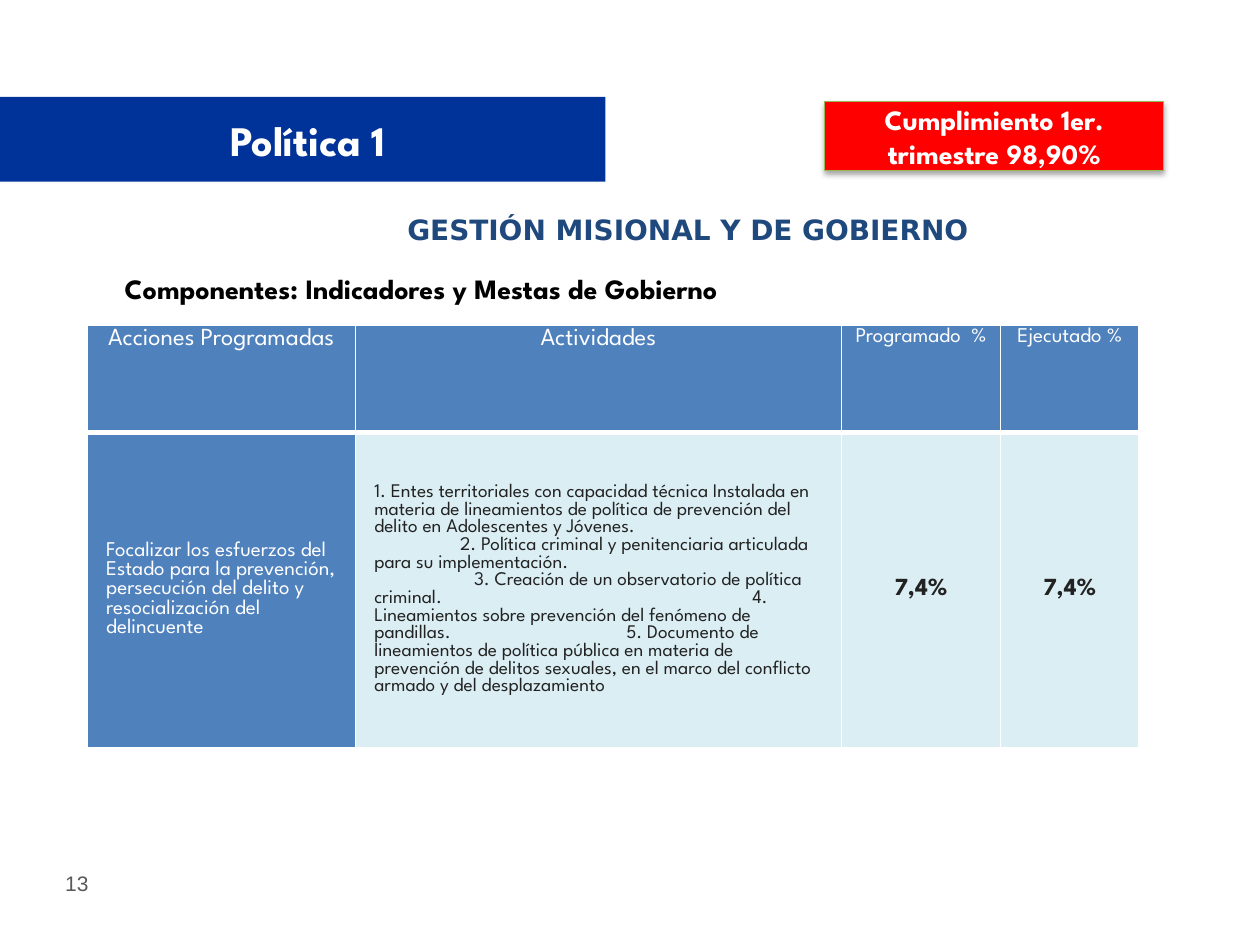
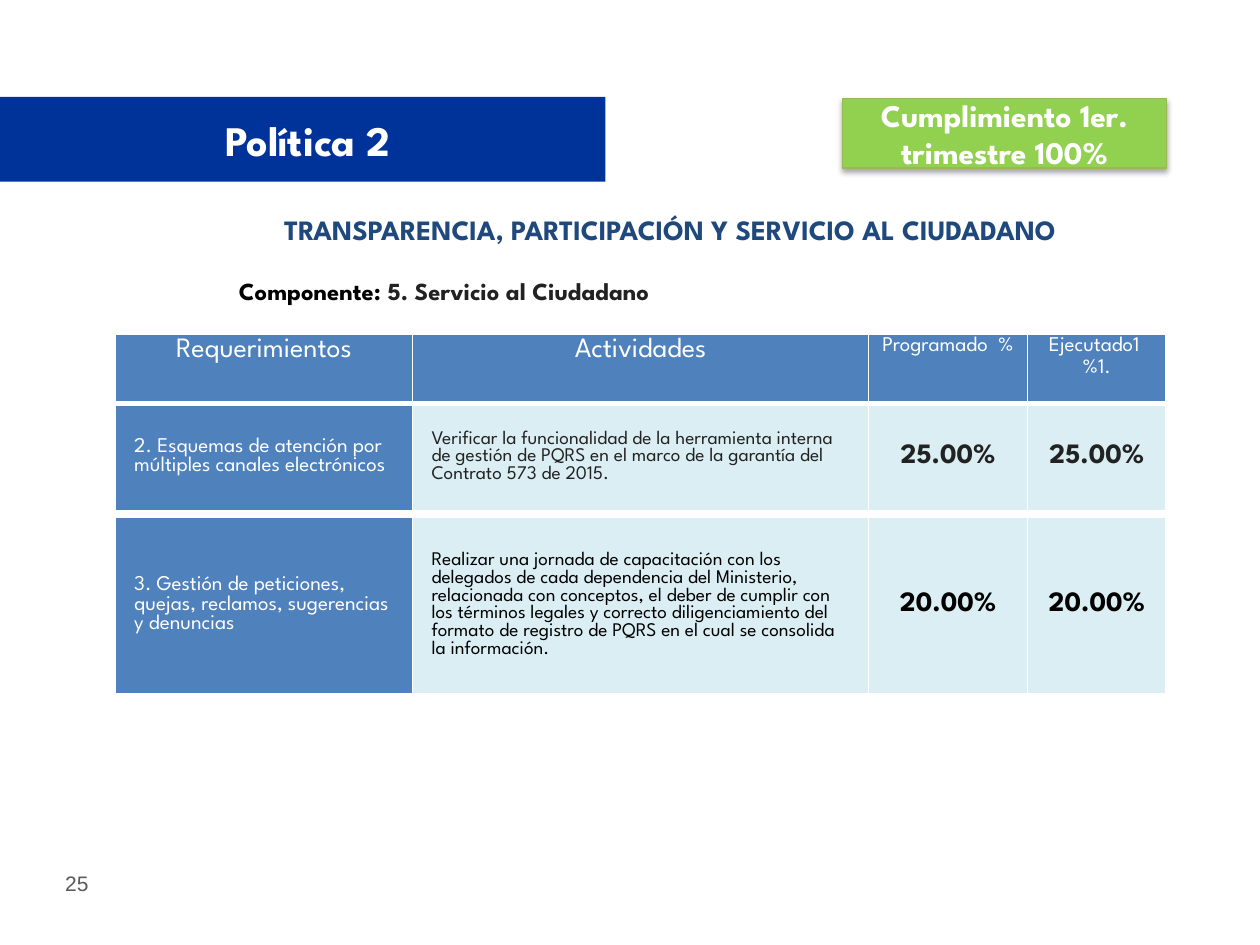
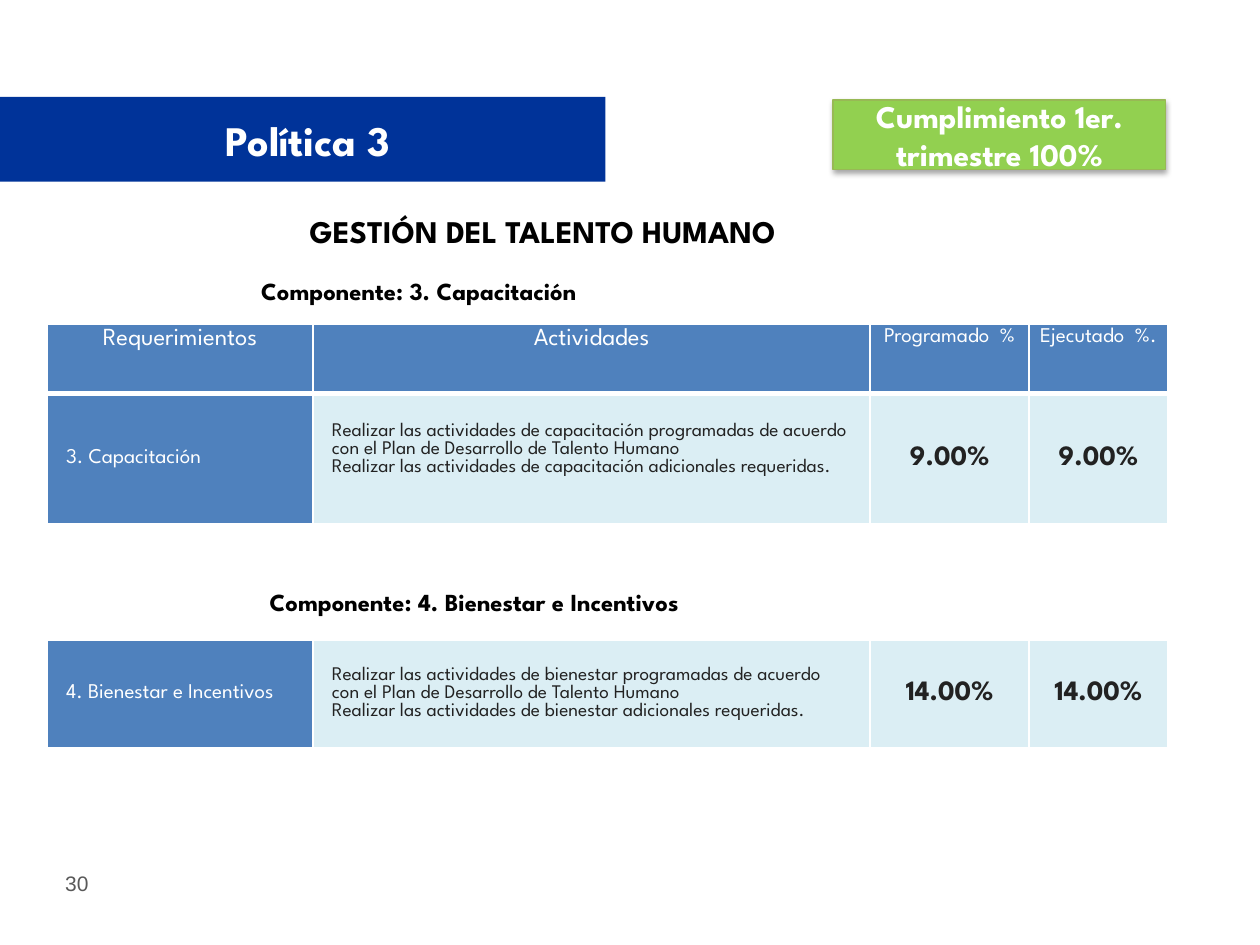
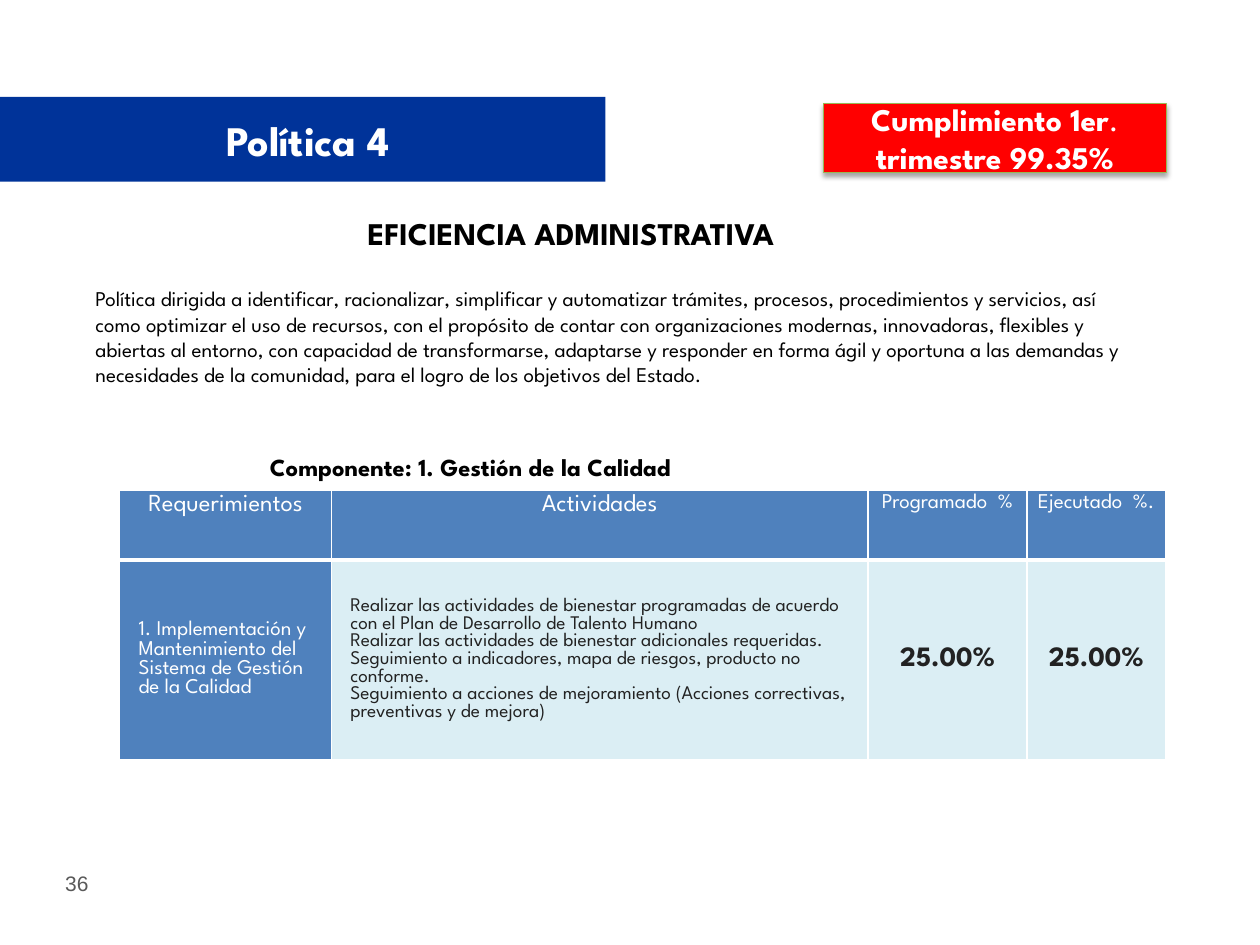
from lxml.etree import SubElement
from pptx import Presentation
from pptx.dml.color import RGBColor
from pptx.enum.shapes import MSO_SHAPE
from pptx.enum.text import MSO_ANCHOR, MSO_AUTO_SIZE, PP_ALIGN
from pptx.oxml.ns import qn
from pptx.util import Pt

# Shared look
FONT = "League Spartan"
WHITE, BLACK, INK, NAVY = "FFFFFF", "000000", "222222", "1F497D"
BAND, HEADER, PALE = "003399", "4F81BD", "DBEEF4"
RED, GREEN, BADGE_LINE = "FF0000", "92D050", "98B955"
SCORE_WIDTHS = [90.8, 79.2]
HEADER_HEIGHT = 39.6

WELFARE = [
    "Realizar las actividades de bienestar programadas de acuerdo con el Plan de Desarrollo de Talento Humano",
    "Realizar las actividades de bienestar adicionales requeridas.",
]


def color(value):
    return RGBColor.from_string(value)


def paint(target, value):
    target.fill.solid()
    target.fill.fore_color.rgb = color(value)


def style(font, size, ink, bold=False, name=FONT):
    font.name, font.size, font.bold = name, Pt(size), bold
    font.color.rgb = color(ink)


def write(frame, text, size, ink, bold=False, name=FONT,
          align=PP_ALIGN.CENTER, spacing=None):
    """Write one paragraph, or one for each item of a list."""
    for index, line in enumerate([text] if isinstance(text, str) else text):
        para = frame.add_paragraph() if index else frame.paragraphs[0]
        para.text = line
        para.alignment = align
        if spacing:
            para.line_spacing = spacing
        style(para.font, size, ink, bold, name)


def add_span(para, text, size, ink, bold):
    span = para.add_run()
    span.text = text
    style(span.font, size, ink, bold)


def add_label(page, left, top, width, height, text, size, ink=BLACK,
              bold=True, name=FONT, align=PP_ALIGN.CENTER):
    box = page.shapes.add_textbox(Pt(left), Pt(top), Pt(width), Pt(height))
    box.text_frame.word_wrap = True
    write(box.text_frame, text, size, ink, bold, name, align)
    return box


def add_band(page, layout):
    """Draw the title band and hand it to the layout, behind the title."""
    band = page.shapes.add_shape(MSO_SHAPE.RECTANGLE, 0, Pt(55.4), Pt(346), Pt(48.4))
    band.shadow.inherit = False
    paint(band, BAND)
    band.line.fill.background()
    layout.shapes._spTree.insert(2, band._element)


def add_page(deck, layout, title, number):
    page = deck.slides.add_slide(layout)
    heading = page.shapes.title
    heading.left, heading.top = Pt(24.5), Pt(62.6)
    heading.width, heading.height = Pt(303), Pt(34.6)
    frame = heading.text_frame
    frame.auto_size = MSO_AUTO_SIZE.NONE
    frame.vertical_anchor = MSO_ANCHOR.MIDDLE
    write(frame, title, 24, WHITE, True)
    add_label(page, 30.2, 493.9, 54, 21.6, number, 12, "595959", False,
              "Arial", PP_ALIGN.LEFT)
    return page


def add_badge(page, left, top, width, spans, size, fill):
    """Add the compliance badge; spans are (text, bold) pairs."""
    badge = page.shapes.add_shape(MSO_SHAPE.RECTANGLE, Pt(left), Pt(top), Pt(width), Pt(39.6))
    badge.shadow.inherit = False
    paint(badge, fill)
    badge.line.color.rgb = color(BADGE_LINE)
    badge.line.width = Pt(0.75)
    # Soft shadow straight below
    effects = badge._element.spPr.find(qn("a:effectLst"))
    shadow = SubElement(effects, qn("a:outerShdw"), blurRad=str(Pt(3.1)),
                        dist=str(Pt(1.8)), dir="5400000", rotWithShape="0")
    tint = SubElement(shadow, qn("a:srgbClr"), val=BLACK)
    SubElement(tint, qn("a:alpha"), val="35000")
    frame = badge.text_frame
    frame.word_wrap = True
    frame.vertical_anchor = MSO_ANCHOR.MIDDLE
    para = frame.paragraphs[0]
    para.alignment = PP_ALIGN.CENTER
    for text, bold in spans:
        add_span(para, text, size, WHITE, bold)


def set_borders(cell, bottom):
    props = cell._tc.get_or_add_tcPr()
    for index, (side, width) in enumerate(
            [("lnL", 1), ("lnR", 1), ("lnT", 1), ("lnB", bottom)]):
        line = props.makeelement(qn("a:" + side), {"w": str(Pt(width))})
        fill = SubElement(line, qn("a:solidFill"))
        SubElement(fill, qn("a:srgbClr"), val=WHITE)
        props.insert(index, line)


def set_margins(cell, left, top, right, bottom):
    cell.margin_left, cell.margin_top = Pt(left), Pt(top)
    cell.margin_right, cell.margin_bottom = Pt(right), Pt(bottom)


def add_grid(page, left, top, text_widths, body_height, body, headers=None,
             header_size=14, header_height=HEADER_HEIGHT, score_size=16,
             activity_ink=INK, bottom_margin=10.8):
    """Add a table of one body row, under a header row when there is one."""
    widths = text_widths + SCORE_WIDTHS
    heights = ([header_height] if headers else []) + [body_height]
    grid = page.shapes.add_table(len(heights), len(widths), Pt(left), Pt(top),
                                 Pt(sum(widths)), Pt(sum(heights))).table
    grid.horz_banding = False
    grid.first_row = bool(headers)
    for column, width in zip(grid.columns, widths):
        column.width = Pt(width)
    for row, height in zip(grid.rows, heights):
        row.height = Pt(height)

    # Header row
    for index, text in enumerate(headers or []):
        cell = grid.cell(0, index)
        paint(cell, HEADER)
        set_margins(cell, 5, 0, 5, 0)
        set_borders(cell, 3)
        write(cell.text_frame, text, header_size if index < 2 else 12, WHITE, spacing=1.15)

    # Body row: action, activities and two scores
    looks = [(12, WHITE, False), (11, activity_ink, False)] + [(score_size, activity_ink, True)] * 2
    for index, (text, look) in enumerate(zip(body, looks)):
        cell = grid.cell(len(heights) - 1, index)
        paint(cell, PALE if index else HEADER)
        cell.vertical_anchor = MSO_ANCHOR.MIDDLE
        is_score = index > 1
        if is_score:
            set_margins(cell, 0, 0, 0, 0)
        else:
            set_margins(cell, 10.8, 10.8, 10.8, bottom_margin if index else 10.8)
        set_borders(cell, 1)
        write(cell.text_frame, text, *look,
              align=PP_ALIGN.CENTER if is_score else PP_ALIGN.LEFT)
    return grid


def indent_first_line(para, indent):
    props = para._p.get_or_add_pPr()
    props.set("marL", "0")
    props.set("indent", str(Pt(indent)))


def build_mission(page):
    add_label(page, 175, 118.1, 436.3, 26.6, "GESTIÓN MISIONAL Y DE GOBIERNO", 16,
              NAVY, name="DejaVu Sans")
    activities = [
        "1. Entes territoriales con capacidad técnica Instalada en materia de lineamientos "
        "de política de prevención del delito en Adolescentes y Jóvenes.",
        "2. Política criminal y penitenciaria articulada para su implementación.",
        "3. Creación de un observatorio de política criminal.\t\t\t\t\t4. Lineamientos sobre "
        "prevención del fenómeno de pandillas.\t\t\t5. Documento de lineamientos de política "
        "pública en materia de prevención de delitos sexuales, en el marco del conflicto "
        "armado y del desplazamiento",
    ]
    grid = add_grid(
        page, 49.9, 185.8, [153.2, 277.9], 180,
        ["Focalizar los esfuerzos del Estado para la prevención, persecución del delito y "
         "resocialización del delincuente", activities, "7,4%", "7,4%"],
        ["Acciones Programadas", "Actividades", "Programado  %", "Ejecutado %"],
        header_height=61.2, score_size=14)
    for para, indent in zip(grid.cell(1, 1).text_frame.paragraphs[1:], [49, 57]):
        indent_first_line(para, indent)
    add_label(page, 30.8, 151.9, 419.8, 26.6,
              "Componentes: Indicadores y Mestas de Gobierno", 16)
    add_badge(page, 471.3, 58, 193.7, [("Cumplimiento 1er. trimestre 98,90%", True)], 16, RED)


def build_transparency(page):
    component = add_label(page, 18, 154.1, 471.6, 41, "", 14)
    para = component.text_frame.paragraphs[0]
    add_span(para, "Componente: ", 14, BLACK, True)
    add_span(para, "5. Servicio al Ciudadano", 14, INK, True)
    widths = [169.9, 260.6]
    add_grid(page, 65.9, 190.8, widths, 61.6,
             ["2. Esquemas de atención por múltiples canales electrónicos",
              "Verificar la funcionalidad de la herramienta interna de gestión de PQRS en el "
              "marco de la garantía del Contrato 573 de 2015.", "25.00%", "25.00%"],
             ["Requerimientos", "Actividades", "Programado  %", "Ejecutado1  %1."],
             header_size=16)
    add_grid(page, 65.9, 295.4, widths, 99.2,
             ["3. Gestión de peticiones, quejas, reclamos, sugerencias y denuncias",
              "Realizar una jornada de capacitación con los delegados de cada dependencia del "
              "Ministerio, relacionada con conceptos, el deber de cumplir con los términos "
              "legales y correcto diligenciamiento del formato de registro de PQRS en el cual "
              "se consolida la información.", "20.00%", "20.00%"],
             activity_ink=BLACK)
    add_label(page, 118.1, 118.1, 529.9, 26.6,
              "TRANSPARENCIA, PARTICIPACIÓN Y SERVICIO AL CIUDADANO", 16, NAVY)
    add_badge(page, 481.5, 56.4, 185, [("Cumplimiento 1er. trimestre 100%", True)], 18, GREEN)


def build_talent(page, headers):
    add_label(page, 169.9, 117.4, 293, 28.8, "GESTIÓN DEL TALENTO HUMANO", 18,
              align=PP_ALIGN.LEFT)
    add_label(page, 54, 154.1, 370.8, 24.5, "Componente: 3. Capacitación", 14)
    widths = [151.9, 318.4]
    add_grid(page, 27, 185.4, widths, 74.2,
             ["3. Capacitación",
              ["Realizar las actividades de capacitación programadas de acuerdo con el Plan de "
               "Desarrollo de Talento Humano",
               "Realizar las actividades de capacitación adicionales requeridas."],
              "9.00%", "9.00%"], headers, bottom_margin=21)
    add_grid(page, 27, 365.8, widths, 59.6,
             ["4. Bienestar e Incentivos", WELFARE, "14.00%", "14.00%"])
    add_label(page, 35.3, 331.9, 471.6, 24.5, "Componente: 4. Bienestar e Incentivos", 14)
    add_badge(page, 476.1, 57.1, 190.1, [("Cumplimiento 1er. trimestre 100%", True)], 18, GREEN)


def build_efficiency(page, headers):
    add_label(page, 203, 118.8, 264.2, 28.8, "EFICIENCIA ADMINISTRATIVA", 18,
              align=PP_ALIGN.LEFT)
    add_label(page, 67.7, 254.9, 402.5, 24.5, "Componente: 1. Gestión de la Calidad", 14)
    add_grid(page, 68.4, 280.4, [121, 306.7], 113.8,
             ["1. Implementación y Mantenimiento del Sistema de Gestión de la Calidad",
              WELFARE + [
                  "Seguimiento a indicadores, mapa de riesgos, producto no conforme.",
                  "Seguimiento a acciones de mejoramiento (Acciones correctivas, preventivas "
                  "y de mejora)"],
              "25.00%", "25.00%"], headers)
    add_badge(page, 470.6, 59, 195.8,
              [("Cumplimiento 1er", True), (". ", False), ("trimestre 99.35%", True)], 18, RED)
    add_label(page, 47.5, 159.8, 609.8, 79.9,
              "Política dirigida a identificar, racionalizar, simplificar y automatizar "
              "trámites, procesos, procedimientos y servicios, así como optimizar el uso de "
              "recursos, con el propósito de contar con organizaciones modernas, innovadoras, "
              "flexibles y abiertas al entorno, con capacidad de transformarse, adaptarse y "
              "responder en forma ágil y oportuna a las demandas y necesidades de la "
              "comunidad, para el logro de los objetivos del Estado.",
              12, bold=False, align=PP_ALIGN.LEFT)


def main():
    deck = Presentation()
    deck.slide_width, deck.slide_height = Pt(720), Pt(540)
    layout = deck.slide_layouts.get_by_name("Title Only")
    pages = [add_page(deck, layout, f"Política {index}", number)
             for index, number in enumerate(["13", "25", "30", "36"], 1)]
    add_band(pages[0], layout)
    headers = ["Requerimientos", "Actividades", "Programado  %", "Ejecutado  %."]
    build_mission(pages[0])
    build_transparency(pages[1])
    build_talent(pages[2], headers)
    build_efficiency(pages[3], headers)
    deck.save("out.pptx")


if __name__ == "__main__":
    main()
